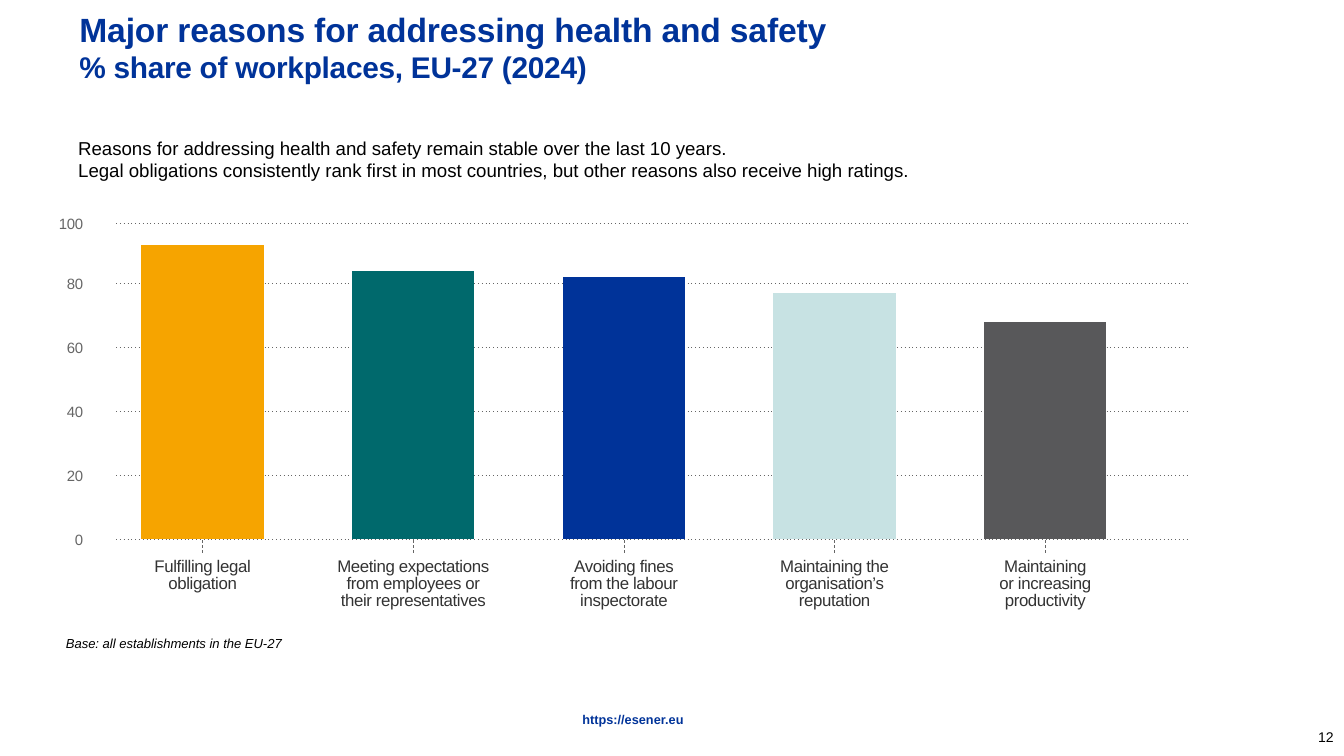
from dataclasses import dataclass

from lxml.etree import SubElement
from pptx import Presentation
from pptx.chart.data import CategoryChartData
from pptx.dml.color import RGBColor
from pptx.enum.chart import XL_CHART_TYPE
from pptx.enum.dml import MSO_LINE
from pptx.enum.shapes import MSO_CONNECTOR
from pptx.enum.text import MSO_ANCHOR, PP_ALIGN
from pptx.oxml import parse_xml
from pptx.oxml.ns import nsdecls, qn
from pptx.util import Pt


@dataclass(frozen=True)
class Theme:
    font: str = "Arial"
    blue: str = "003399"
    black: str = "000000"
    grey: str = "666666"
    label: str = "333333"
    title_size: float = 18
    subtitle_size: float = 16
    body_size: float = 10
    label_size: float = 9
    axis_size: float = 8
    base_size: float = 7
    link_size: float = 6.8
    number_size: float = 7.5


@dataclass
class SlideBuilder:
    theme: Theme
    slide: object

    def text(self, bounds, lines, size, color, bold=False, italic=False,
             align=PP_ALIGN.LEFT, anchor=MSO_ANCHOR.TOP, insets=(0, 0),
             spacing=None, tracking=0):
        box = self.slide.shapes.add_textbox(*(Pt(length) for length in bounds))
        frame = box.text_frame
        frame.word_wrap = True
        frame.vertical_anchor = anchor
        frame.margin_left = frame.margin_right = Pt(insets[0])
        frame.margin_top = frame.margin_bottom = Pt(insets[1])
        frame.text = lines
        for para in frame.paragraphs:
            para.alignment = align
            para.line_spacing = spacing
            for span in para.runs:
                font = span.font
                font.name, font.size = self.theme.font, Pt(size)
                font.bold, font.italic = bold, italic
                font.color.rgb = RGBColor.from_string(color)
                if tracking:
                    span._r.get_or_add_rPr().set("spc", str(tracking))
        return box

    def line(self, start, end, width, dash):
        line = self.slide.shapes.add_connector(
            MSO_CONNECTOR.STRAIGHT, *(Pt(length) for length in start + end))
        line.line.color.rgb = RGBColor.from_string(self.theme.grey)
        line.line.width = Pt(width)
        line.line.dash_style = MSO_LINE.DASH
        properties = line._element.spPr
        properties.find(".//" + qn("a:prstDash")).set("val", dash)
        SubElement(properties, qn("a:effectLst"))

    def columns(self, bounds, categories, values, colors, gap):
        data = CategoryChartData()
        data.categories = categories
        data.add_series("Share of workplaces (%)", values)
        chart = self.slide.shapes.add_chart(
            XL_CHART_TYPE.COLUMN_CLUSTERED,
            *(Pt(length) for length in bounds), data).chart
        chart.has_legend = chart.has_title = False
        chart.font.name = self.theme.font
        chart.font.size = Pt(self.theme.axis_size)
        chart.font.color.rgb = RGBColor.from_string(self.theme.grey)

        # The scale is fixed; its lines and labels stand behind the chart
        share = chart.value_axis
        share.minimum_scale, share.maximum_scale, share.major_unit = 0, 100, 20
        share.has_major_gridlines = False
        share.visible = chart.category_axis.visible = False

        # One colour per column
        plot = chart.plots[0]
        plot.gap_width, plot.vary_by_categories = gap, False
        for index, color in enumerate(colors):
            fill = plot.series[0].points[index].format.fill
            fill.solid()
            fill.fore_color.rgb = RGBColor.from_string(color)

        # Plot area fills the frame, without a background
        area = chart._chartSpace.chart.plotArea
        for layout in area.findall(qn("c:layout")):
            area.remove(layout)
        area.insert(0, parse_xml(
            f'<c:layout {nsdecls("c")}><c:manualLayout>'
            '<c:layoutTarget val="inner"/><c:xMode val="edge"/>'
            '<c:yMode val="edge"/><c:x val="0"/><c:y val="0"/>'
            '<c:w val="1"/><c:h val="1"/></c:manualLayout></c:layout>'))
        clear = (f'<c:spPr {nsdecls("c", "a")}><a:noFill/>'
                 '<a:ln><a:noFill/></a:ln></c:spPr>')
        area.append(parse_xml(clear))
        chart._chartSpace.chart.addnext(parse_xml(clear))


# Reason (one line per printed line), share in %, colour
REASONS = [
    ("Fulfilling legal\vobligation", 92, "F6A400"),
    ("Meeting expectations\vfrom employees or\vtheir representatives", 84, "00696C"),
    ("Avoiding fines\vfrom the labour\vinspectorate", 82, "003399"),
    ("Maintaining the\vorganisation’s\vreputation", 77, "C7E2E3"),
    ("Maintaining\vor increasing\vproductivity", 68, "58585A"),
]
PLOT = (52.1, 117.6, 564.3, 171.4)
GRID_LEFT, GRID_RIGHT, GRID_TOP = 62.2, 637.2, 119.5


def main():
    theme = Theme()
    deck = Presentation()
    deck.slide_width, deck.slide_height = Pt(720), Pt(405)
    page = SlideBuilder(theme, deck.slides.add_slide(deck.slide_layouts[6]))

    # Title and introduction
    title = page.text(
        (35.5, 10.6, 432, 28.8),
        "Major reasons for addressing health and safety\v"
        "% share of workplaces, EU-27 (2024)",
        theme.title_size, theme.blue, bold=True, anchor=MSO_ANCHOR.MIDDLE,
        insets=(7.2, 3.6), tracking=-8)
    subtitle = title.text_frame.paragraphs[0].runs[1]
    subtitle.font.size = Pt(theme.subtitle_size)
    subtitle._r.get_or_add_rPr().set("spc", "-15")
    page.text(
        (34.8, 67.5, 466.6, 36),
        "Reasons for addressing health and safety remain stable over the last 10 years.\n"
        "Legal obligations consistently rank first in most countries, "
        "but other reasons also receive high ratings.",
        theme.body_size, theme.black, insets=(7.2, 5.8), tracking=-1)

    # Scale: gridlines and values
    left, top, width, height = PLOT
    base = top + height
    for value in range(0, 101, 20):
        y = max(GRID_TOP, base - height * value / 100)
        page.line((GRID_LEFT, y), (GRID_RIGHT, y), 0.52, "dot")
        page.text((24.6, y - 5.4, 20, 10.8), str(value), theme.axis_size,
                  theme.grey, align=PP_ALIGN.RIGHT, insets=(0, 0.7), tracking=-20)

    # Columns
    labels, shares, colors = zip(*REASONS)
    names = [label.replace("\v", " ") for label in labels]
    page.columns(PLOT, names, shares, colors, gap=72)

    # Ticks and reason labels under the columns
    step = width / len(REASONS)
    for index, label in enumerate(labels):
        center = left + step * (index + 0.5)
        page.line((center, base + 7), (center, base), 0.37, "dash")
        page.text((center - step / 2, base + 8.5, step, 30), label,
                  theme.label_size, theme.label, align=PP_ALIGN.CENTER,
                  insets=(0, 2.2), spacing=Pt(9), tracking=-20)

    # Base note, web address and page number
    page.text((35.3, 339.6, 135.4, 9.4), "Base: all establishments in the EU-27",
              theme.base_size, theme.black, italic=True, insets=(0, 0.9))
    page.text((109.4, 382.3, 459.4, 6.5), "https://esener.eu", theme.link_size,
              theme.blue, bold=True, align=PP_ALIGN.CENTER, spacing=0.9)
    page.text((671.3, 384.2, 48.2, 21.6), "12", theme.number_size, theme.black,
              align=PP_ALIGN.RIGHT, anchor=MSO_ANCHOR.MIDDLE, insets=(5, 2.9))

    deck.save("out.pptx")


if __name__ == "__main__":
    main()
